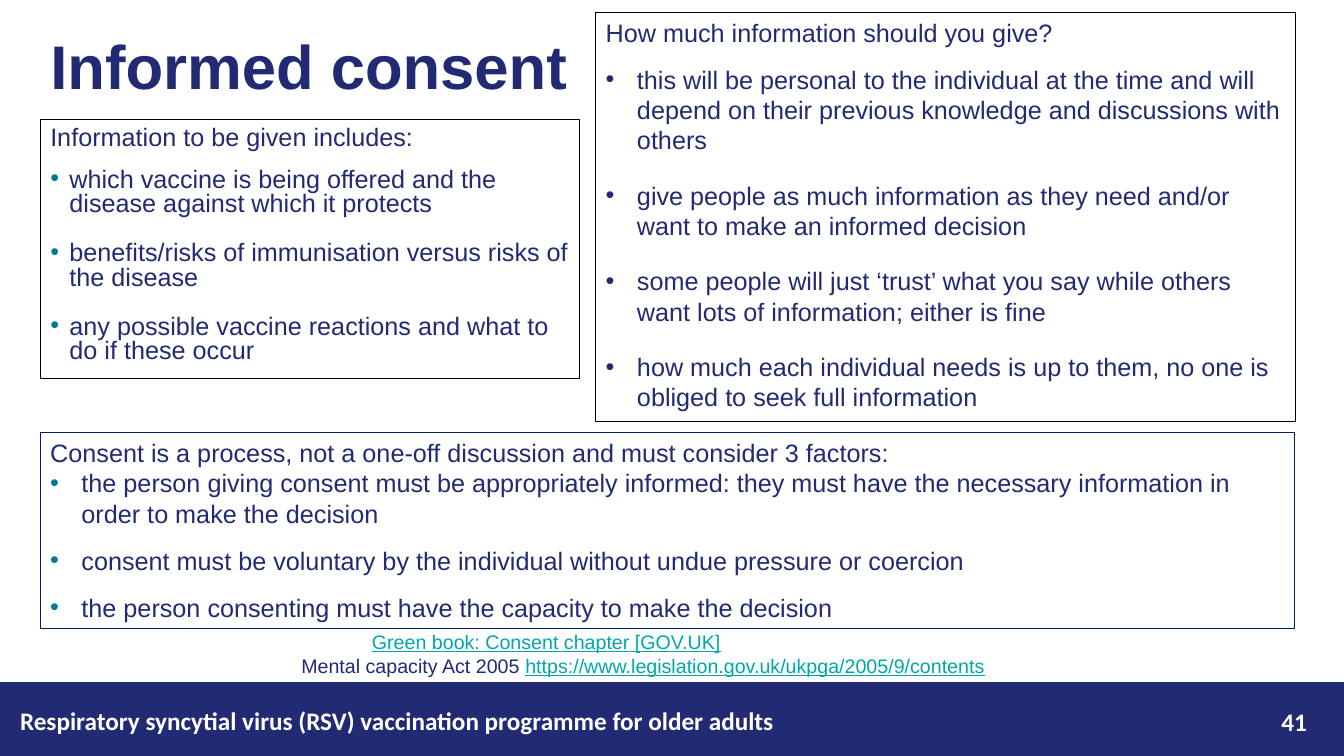
from lxml import etree
from pptx import Presentation
from pptx import util as u
from pptx.dml import color
from pptx.enum import shapes, text
from pptx.oxml import ns

NAVY, TEAL, LINK, WHITE, BLACK = "212A73", "007C91", "00A7A7", "FFFFFF", "000000"
COLS, ROWS = 133.3, 75


def rgb(value):
    return color.RGBColor.from_string(value)


class Deck:
    base = {"name": "Arial", "size": u.Pt(18), "bold": False}

    def __init__(self):
        self.prs = Presentation()
        self.prs.slide_width = u.Inches(13.33)
        self.prs.slide_height = u.Inches(7.5)
        self.s = self.prs.slides.add_slide(self.prs.slide_layouts[5])

    def grid(self, col, row, cols, rows):
        w, h = self.prs.slide_width / COLS, self.prs.slide_height / ROWS
        return [round(n) for n in (col * w, row * h, cols * w, rows * h)]

    def run(self, p, words, fill=NAVY, **fmt):
        r = p.add_run()
        r.text = words
        for key, value in {**self.base, **fmt}.items():
            setattr(r.font, key, value)
        r.font.color.rgb = rgb(fill)

    def bullet(self, p, indent, fill):
        pPr = p._p.get_or_add_pPr()
        pPr.set("marL", str(u.Inches(indent)))
        pPr.set("indent", str(-u.Inches(indent)))
        clr = etree.SubElement(pPr, ns.qn("a:buClr"))
        etree.SubElement(clr, ns.qn("a:srgbClr"), val=fill)
        etree.SubElement(pPr, ns.qn("a:buFont"), typeface="Arial")
        etree.SubElement(pPr, ns.qn("a:buChar"), char="•")

    def title(self, cell, words):
        sp = self.s.shapes.title
        sp.left, sp.top, sp.width, sp.height = self.grid(*cell)
        sp.text_frame.vertical_anchor = text.MSO_ANCHOR.MIDDLE
        p = sp.text_frame.paragraphs[0]
        p.alignment = text.PP_ALIGN.LEFT
        p.line_spacing = 0.9
        self.run(p, words, size=u.Pt(44), bold=True)

    def band(self, cell, fill):
        sp = self.s.shapes.add_shape(shapes.MSO_SHAPE.RECTANGLE, *self.grid(*cell))
        sp.shadow.inherit = False
        sp.fill.solid()
        sp.fill.fore_color.rgb = sp.line.color.rgb = rgb(fill)
        sp.line.width = u.Pt(1)

    def label(self, cell, *runs):
        sp = self.s.shapes.add_textbox(*self.grid(*cell))
        sp.text_frame.word_wrap = True
        for words, fmt in runs:
            self.run(sp.text_frame.paragraphs[0], words, **fmt)
        return sp

    def panel(self, cell, heading, items, border, indent, mark, first=12, lead=1.0, **fmt):
        sp = self.label(cell, (heading, {}))
        sp.line.color.rgb = rgb(border)
        sp.line.width = u.Pt(0.75)
        tf = sp.text_frame
        if lead != 1:
            tf.paragraphs[0].line_spacing = 0.9
        for i, words in enumerate(items):
            p = tf.add_paragraph()
            spacing = {"space_before": u.Pt(12 if i else first), "line_spacing": lead}
            for key, value in {**spacing, **fmt}.items():
                setattr(p, key, value)
            self.bullet(p, indent, mark)
            self.run(p, words)


def main():
    d = Deck()
    d.band((0, 67.7, COLS, 7.3), NAVY)
    d.title((4, 2.9, 53.5, 8), "Informed consent")
    d.panel((4, 11.9, 53.5, 25.7), "Information to be given includes:", [
        "which vaccine is being offered and the disease against which it protects",
        "benefits/risks of immunisation versus risks of the disease",
        "any possible vaccine reactions and what to do if these occur",
    ], BLACK, 0.19, TEAL, lead=0.8, space_after=u.Pt(6))
    d.panel((59.1, 1.2, 69.4, 40.6), "How much information should you give?", [
        "this will be personal to the individual at the time and will depend on their "
        "previous knowledge and discussions with others",
        "give people as much information as they need and/or want to make an informed decision",
        "some people will just ‘trust’ what you say while others want lots of information; "
        "either is fine",
        "how much each individual needs is up to them, no one is obliged to seek full information",
    ], BLACK, 0.31, NAVY, space_after=u.Pt(6))
    d.panel((4, 42.9, 124.4, 19.5),
            "Consent is a process, not a one-off discussion and must consider 3 factors:", [
        "the person giving consent must be appropriately informed: they must have the "
        "necessary information in order to make the decision",
        "consent must be voluntary by the individual without undue pressure or coercion",
        "the person consenting must have the capacity to make the decision",
    ], "002060", 0.31, TEAL, first=0)
    small = {"size": u.Pt(14)}
    link = {**small, "fill": LINK, "underline": True}
    d.label((35.9, 62, 68.5, 3.4), ("Green book: Consent chapter [GOV.UK]", link))
    d.label((28.9, 64.4, 100, 3.3), ("Mental capacity Act 2005 ", small),
            ("https://www.legislation.gov.uk/ukpga/2005/9/contents", link))
    footer = {"name": "Calibri", "bold": True, "fill": WHITE}
    d.label((1, 69.5, 103.1, 4.4),
            ("Respiratory syncytial virus (RSV) vaccination programme for older adults", footer))
    d.label((126.1, 69.6, 7, 4), ("41", footer))
    d.prs.save("out.pptx")


if __name__ == "__main__":
    main()
